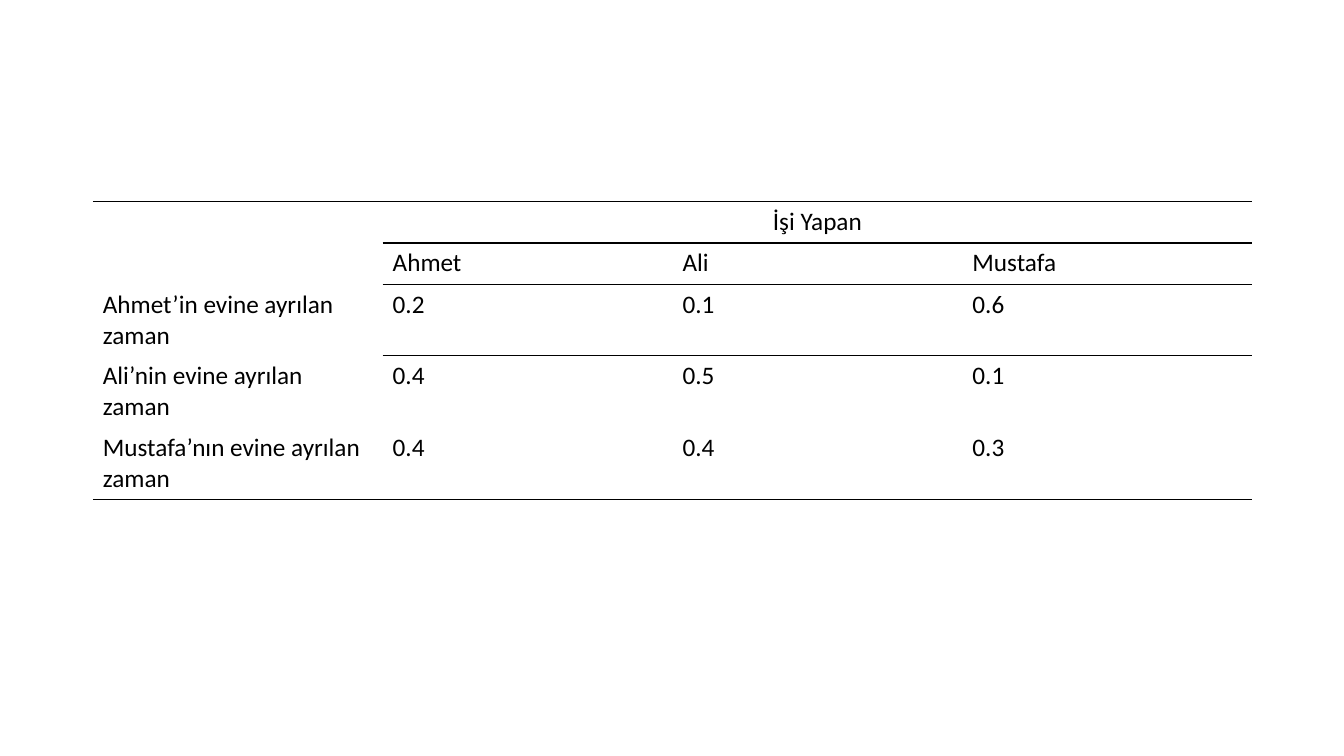
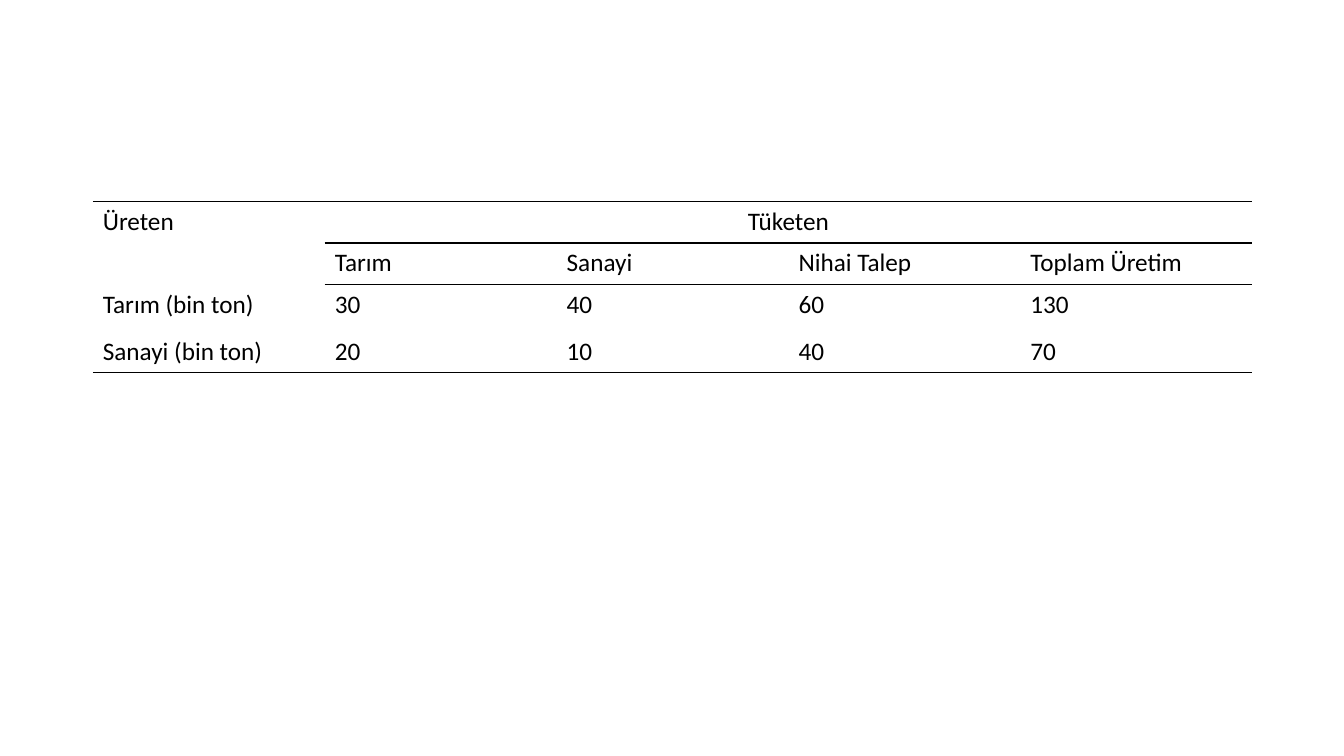
import dataclasses

import lxml.etree
import pptx
import pptx.dml.color
import pptx.enum.text
import pptx.oxml.ns
import pptx.presentation
import pptx.table
import pptx.util

Inches = pptx.util.Inches
Pt = pptx.util.Pt

BLACK = pptx.dml.color.RGBColor(0, 0, 0)
FONT_NAME = "Calibri"
FONT_SIZE = Pt(18)
RULE_WIDTH = Pt(1)
TABLE_LEFT = Inches(0.92)
TABLE_TOP = Inches(2)
TABLE_WIDTH = Inches(11.5)


@dataclasses.dataclass(frozen=True)
class Matrix:
    corner: str
    merge_corner: bool
    heading: str
    columns: tuple[str, ...]
    rows: tuple[tuple[str, ...], ...]
    row_heights: tuple[float, ...]
    inner_rules: tuple[int, ...]

    def has_rule(self, edge: int, column: int) -> bool:
        outer_edges = (0, len(self.row_heights))
        return edge in outer_edges or (column > 0 and edge in self.inner_rules)


HOUSE_WORK = Matrix(
    corner="",
    merge_corner=False,
    heading="İşi Yapan",
    columns=("Ahmet", "Ali", "Mustafa"),
    rows=(
        ("Ahmet’in evine ayrılan zaman", "0.2", "0.1", "0.6"),
        ("Ali’nin evine ayrılan zaman", "0.4", "0.5", "0.1"),
        ("Mustafa’nın evine ayrılan zaman", "0.4", "0.4", "0.3"),
    ),
    row_heights=(0.41, 0.41, 0.71, 0.71, 0.71),
    inner_rules=(1, 2, 3),
)

PRODUCTION = Matrix(
    corner="Üreten",
    merge_corner=True,
    heading="Tüketen",
    columns=("Tarım", "Sanayi", "Nihai Talep", "Toplam Üretim"),
    rows=(
        ("Tarım (bin ton)", "30", "40", "60", "130"),
        ("Sanayi (bin ton)", "20", "10", "40", "70"),
    ),
    row_heights=(0.41, 0.41, 0.47, 0.41),
    inner_rules=(1, 2),
)


def write_text(cell: pptx.table._Cell, text: str) -> None:
    run = cell.text_frame.paragraphs[0].add_run()
    run.text = text
    run.font.name = FONT_NAME
    run.font.size = FONT_SIZE
    run.font.bold = False
    run.font.color.rgb = BLACK


def draw_borders(cell: pptx.table._Cell, top: bool, bottom: bool) -> None:
    qn = pptx.oxml.ns.qn
    properties = cell._tc.get_or_add_tcPr()
    sides = {"a:lnL": False, "a:lnR": False, "a:lnT": top, "a:lnB": bottom}
    for side, visible in sides.items():
        line = lxml.etree.SubElement(properties, qn(side), w=str(RULE_WIDTH))
        if visible:
            fill = lxml.etree.SubElement(line, qn("a:solidFill"))
            lxml.etree.SubElement(fill, qn("a:srgbClr"), val=str(BLACK))
        else:
            lxml.etree.SubElement(line, qn("a:noFill"))
    cell.fill.background()


def add_matrix_slide(
    presentation: pptx.presentation.Presentation, matrix: Matrix
) -> None:
    slide = presentation.slides.add_slide(presentation.slide_layouts[6])
    row_count, column_count = len(matrix.row_heights), len(matrix.columns) + 1
    table = slide.shapes.add_table(
        row_count,
        column_count,
        TABLE_LEFT,
        TABLE_TOP,
        TABLE_WIDTH,
        Inches(sum(matrix.row_heights)),
    ).table
    table.first_row = False
    table.horz_banding = False
    for row, height in zip(table.rows, matrix.row_heights):
        row.height = Inches(height)

    texts = (
        (matrix.corner, matrix.heading) + ("",) * (column_count - 2),
        ("",) + matrix.columns,
    ) + matrix.rows
    for row_index, row_texts in enumerate(texts):
        for column_index, text in enumerate(row_texts):
            cell = table.cell(row_index, column_index)
            draw_borders(
                cell,
                matrix.has_rule(row_index, column_index),
                matrix.has_rule(row_index + 1, column_index),
            )
            if text:
                write_text(cell, text)

    heading = table.cell(0, 1)
    heading.merge(table.cell(0, column_count - 1))
    heading.vertical_anchor = pptx.enum.text.MSO_ANCHOR.MIDDLE
    heading.text_frame.paragraphs[0].alignment = pptx.enum.text.PP_ALIGN.CENTER
    if matrix.merge_corner:
        table.cell(0, 0).merge(table.cell(1, 0))


def main() -> None:
    presentation = pptx.Presentation()
    presentation.slide_width = Inches(13.33)
    presentation.slide_height = Inches(7.5)
    for matrix in (HOUSE_WORK, PRODUCTION):
        add_matrix_slide(presentation, matrix)
    presentation.save("out.pptx")


if __name__ == "__main__":
    main()
